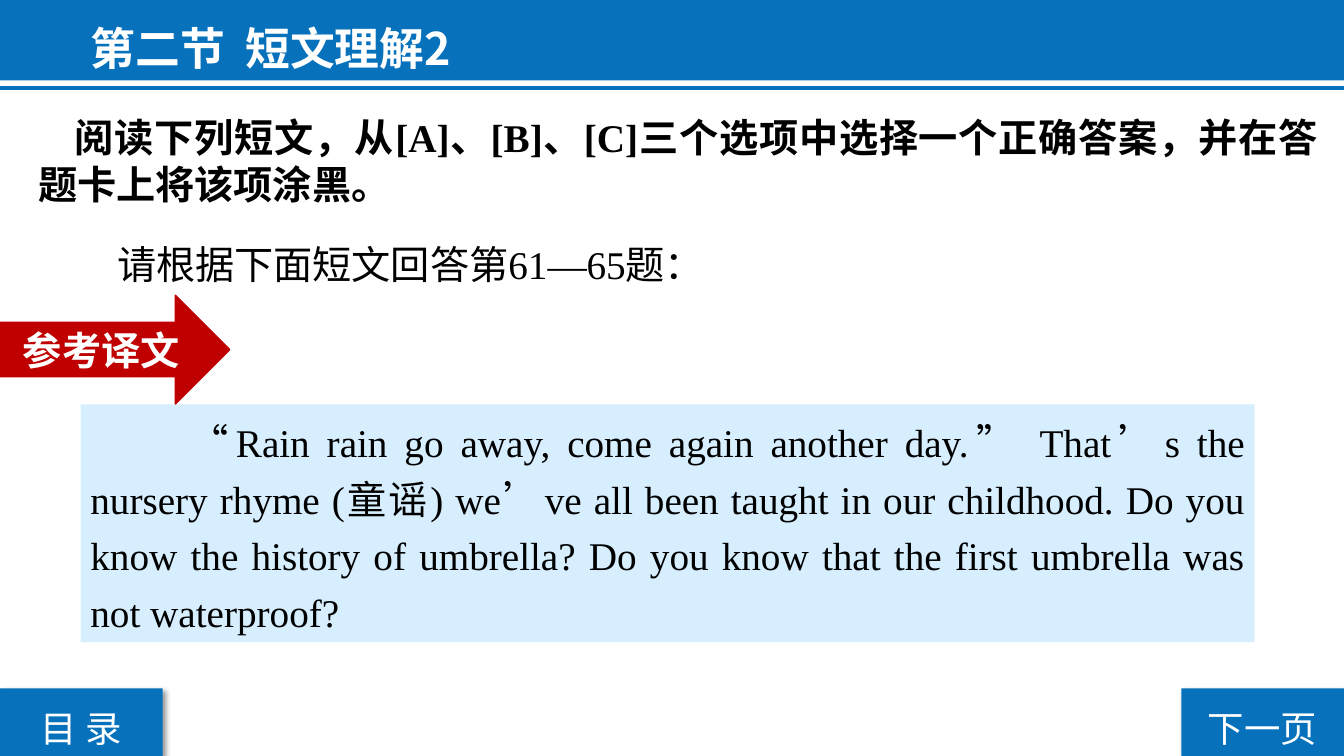
from lxml import etree
from pptx import Presentation
from pptx import util as u
from pptx.dml.color import RGBColor
from pptx.enum import shapes, text
from pptx.oxml import ns

COLORS = {"blue": "0772BB", "pale": "D6EEFE", "red": "C00000",
          "white": "FFFFFF", "black": "000000"}
HAN, LATIN = "Noto Sans CJK SC", "Times New Roman"
ALIGN = text.PP_ALIGN


def write(box, spans, size, color="black", bold=False, align=ALIGN.JUSTIFY,
          spacing=1.0, indent=0, anchor=text.MSO_ANCHOR.TOP):
    """Fill a box with one paragraph made of (wording, font) spans."""
    frame = box.text_frame
    frame.word_wrap = True
    frame.auto_size = text.MSO_AUTO_SIZE.NONE
    frame.vertical_anchor = anchor
    para = frame.paragraphs[0]
    para.alignment, para.line_spacing = align, spacing
    props = para._p.get_or_add_pPr()
    props.set("marL", "0")
    props.set("indent", str(u.Cm(indent)))
    for wording, font in spans:
        span = para.add_run()
        span.text = wording
        span.font.name, span.font.size, span.font.bold = font, u.Pt(size), bold
        span.font.color.rgb = RGBColor.from_string(COLORS[color])
        east = etree.SubElement(span.font._element, ns.qn("a:ea"))
        east.set("typeface", font)


def add_block(kind, left, top, width, height, color):
    """Add a flat preset shape without outline or shadow."""
    block = page.shapes.add_shape(kind, u.Cm(left), u.Cm(top), u.Cm(width), u.Cm(height))
    block.shadow.inherit = False
    block.fill.solid()
    block.fill.fore_color.rgb = RGBColor.from_string(COLORS[color])
    block.line.fill.background()
    return block


deck = Presentation()
deck.slide_width, deck.slide_height = u.Cm(33.87), u.Cm(19.05)
page = deck.slides.add_slide(deck.slide_layouts[5])
RECT = shapes.MSO_SHAPE.RECTANGLE

# Header band and rule
add_block(RECT, -0.03, 0, 33.93, 2.03, "blue")
rule = page.shapes.add_connector(shapes.MSO_CONNECTOR.STRAIGHT,
                                 u.Cm(33.9), u.Cm(2.21), 0, u.Cm(2.21))
rule.line.color.rgb = RGBColor.from_string(COLORS["blue"])
rule.line.width = u.Pt(3)
etree.SubElement(rule._element.spPr, ns.qn("a:effectLst"))

# Navigation buttons with a soft shadow
for left, label in ((0, "目 录"), (29.77, "下一页")):
    button = add_block(RECT, left, 17.35, 4.1, 1.7, "blue")
    effects = button._element.spPr.find(ns.qn("a:effectLst"))
    shadow = etree.SubElement(effects, ns.qn("a:outerShdw"), blurRad=str(u.Pt(4)),
                              dist=str(u.Pt(3)), dir="2700000", algn="tl", rotWithShape="0")
    tint = etree.SubElement(shadow, ns.qn("a:srgbClr"), val=COLORS["black"])
    etree.SubElement(tint, ns.qn("a:alpha"), val="40000")
    write(button, [(label, HAN)], 26, "white", align=ALIGN.CENTER, spacing=1.3)

# Title, raised above the band
title = page.shapes.title
title.left, title.top, title.width, title.height = u.Cm(2.03), 0, u.Cm(23.16), u.Cm(2.03)
title.element.getparent().append(title.element)
write(title, [("第二节  短文理解2", HAN)], 32, "white", True, ALIGN.LEFT, 1.3)

# Passage panel, with full-width quotation marks
passage = add_block(RECT, 2.03, 10.19, 29.59, 5.99, "pale")
write(passage, [
    ("“", HAN), ("Rain rain go away, come again another day.", LATIN), ("”", HAN),
    (" That", LATIN), ("’", HAN), ("s the nursery rhyme (", LATIN), ("童谣", HAN),
    (") we", LATIN), ("’", HAN),
    ("ve all been taught in our childhood. Do you know the history of umbrella? "
     "Do you know that the first umbrella was not waterproof?", LATIN),
], 28, spacing=1.2, indent=2.5)

# Instructions
directions = page.shapes.add_textbox(u.Cm(0.71), u.Cm(2.74), u.Cm(32.77), u.Cm(2.64))
write(directions, [
    ("阅读下列短文，从", HAN), ("[A]", LATIN), ("、", HAN), ("[B]", LATIN), ("、", HAN),
    ("[C]", LATIN), ("三个选项中选择一个正确答案，并在答题卡上将该项涂黑。", HAN),
], 28, bold=True, indent=0.93)
prompt = page.shapes.add_textbox(u.Cm(1.8), u.Cm(5.94), u.Cm(17.96), u.Cm(1.45))
write(prompt, [("请根据下面短文回答第", HAN), ("61—65", LATIN), ("题：", HAN)], 28, indent=0.9)

# Translation arrow
arrow = add_block(shapes.MSO_SHAPE.RIGHT_ARROW, 0, 7.44, 5.79, 2.74, "red")
arrow.line.color.rgb = RGBColor.from_string(COLORS["red"])
arrow.line.width = u.Pt(1)
write(arrow, [("参考译文", HAN)], 28, "white", True, ALIGN.CENTER,
      anchor=text.MSO_ANCHOR.MIDDLE)

deck.save("out.pptx")
